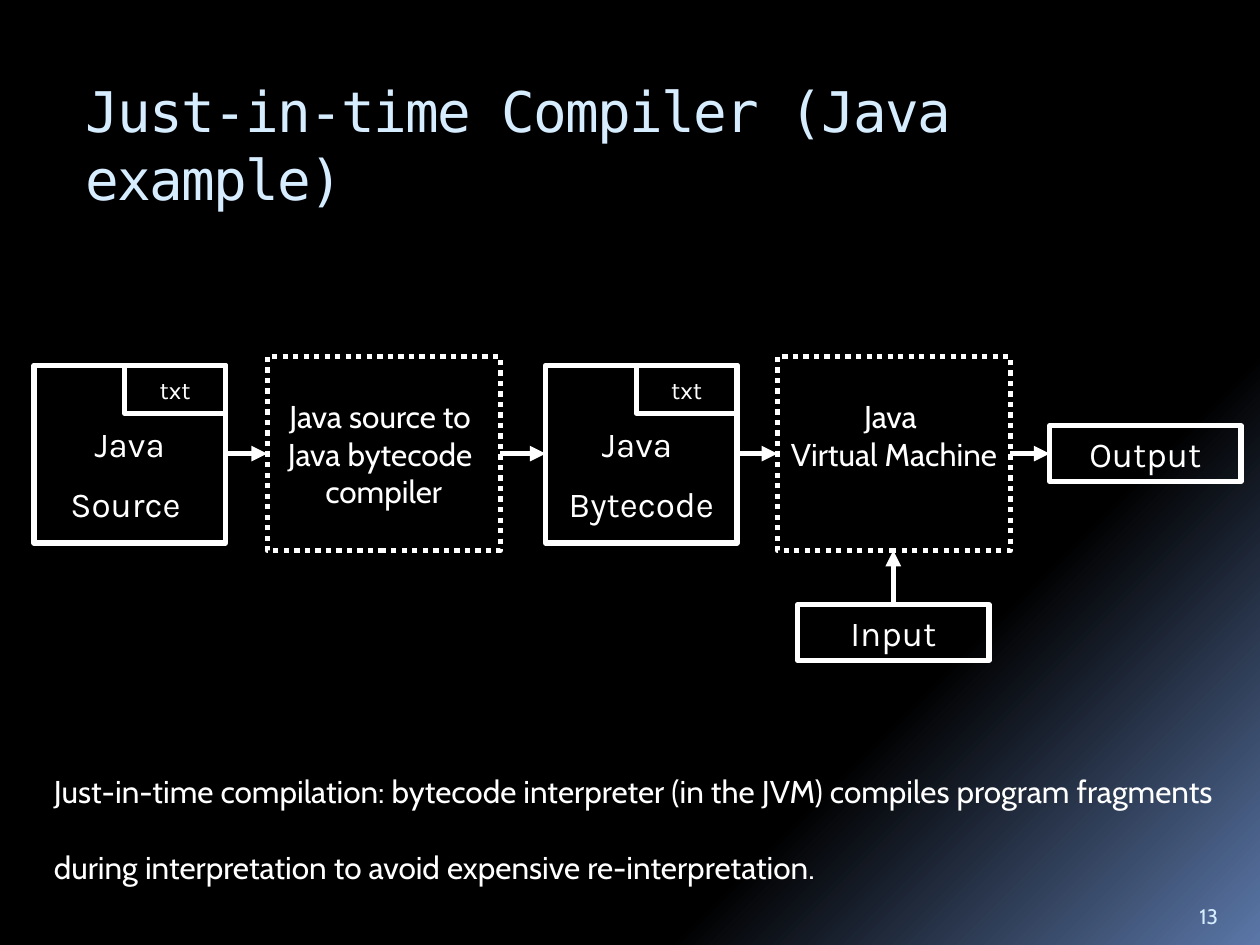
"""Build the slide on just-in-time compilation with Java."""
import pptx
import pptx.dml.color
import pptx.enum.dml
import pptx.enum.shapes
import pptx.enum.text
import pptx.oxml
import pptx.oxml.ns
import pptx.util

Inches = pptx.util.Inches
Pt = pptx.util.Pt
RGBColor = pptx.dml.color.RGBColor
PP_ALIGN = pptx.enum.text.PP_ALIGN
MSO_ANCHOR = pptx.enum.text.MSO_ANCHOR
RECTANGLE = pptx.enum.shapes.MSO_SHAPE.RECTANGLE

WHITE = RGBColor(0xFF, 0xFF, 0xFF)
BLACK = RGBColor(0x00, 0x00, 0x00)
PALE_BLUE = RGBColor(0xD6, 0xEC, 0xFF)
STEEL_BLUE = RGBColor(0x5B, 0x77, 0xA8)

FLOW_Y = 3.6
BOX_W = 1.52
STAGE_W = 1.85
STAGE_H = 1.54


def set_background(s):
    fill = s.background.fill
    fill.gradient()
    fill.gradient_angle = 315
    for stop, position, color in zip(fill.gradient_stops, (0.73, 1), (BLACK, STEEL_BLUE)):
        stop.position = position
        stop.color.rgb = color


def write(tf, lines, size, font="Cabin", color=WHITE, align=PP_ALIGN.CENTER,
          anchor=MSO_ANCHOR.TOP, gap=0):
    tf.vertical_anchor = anchor
    for i, line in enumerate(lines):
        p = tf.add_paragraph() if i else tf.paragraphs[0]
        p.text = line
        p.alignment = align
        p.space_before = Pt(gap if i else 0)
        p.font.size = Pt(size)
        p.font.name = font
        p.font.color.rgb = color


def add_title(s, text):
    sp = s.shapes.title
    sp.left, sp.top, sp.width, sp.height = map(Inches, (0.58, 0.56, 8.92, 1))
    write(sp.text_frame, [text], 32, "DejaVu Sans Mono", PALE_BLUE, PP_ALIGN.LEFT)
    sp.text_frame.word_wrap = True
    sp.text_frame.auto_size = pptx.enum.text.MSO_AUTO_SIZE.NONE
    for r in sp.text_frame.paragraphs[0].runs:
        r._r.get_or_add_rPr().set("spc", "-100")


def add_text(s, left, top, width, height, lines, size, **style):
    sp = s.shapes.add_textbox(*map(Inches, (left, top, width, height)))
    sp.text_frame.word_wrap = False
    write(sp.text_frame, lines, size, **style)


def add_box(shapes, left, top, width, height, lines=(), size=20,
            anchor=MSO_ANCHOR.MIDDLE):
    sp = shapes.add_shape(RECTANGLE, *map(Inches, (left, top, width, height)))
    sp.shadow.inherit = False
    sp.fill.background()
    sp.line.color.rgb = WHITE
    sp.line.width = Pt(3)
    write(sp.text_frame, lines, size, "Karla", anchor=anchor, gap=10)
    return sp


def add_document(s, left, lines):
    shapes = s.shapes.add_group_shape().shapes
    sp = add_box(shapes, left, 2.9, BOX_W, 1.41, lines, anchor=MSO_ANCHOR.BOTTOM)
    sp.text_frame.margin_bottom = Inches(0.15)
    add_box(shapes, left + BOX_W - 0.8, 2.9, 0.8, 0.38, ["txt"], 14)


def add_stage(s, left, lines):
    sp = add_box(s.shapes, left, FLOW_Y - STAGE_H / 2, STAGE_W, STAGE_H)
    sp.line.dash_style = pptx.enum.dml.MSO_LINE.ROUND_DOT
    add_text(s, left, 3.1, STAGE_W, 1.01, lines, 18)


def add_arrow(s, x1, y1, x2, y2):
    line = s.shapes.add_connector(pptx.enum.shapes.MSO_CONNECTOR.STRAIGHT,
                                  *map(Inches, (x1, y1, x2, y2)))
    line.line.color.rgb = WHITE
    line.line.width = Pt(3)
    ns = pptx.oxml.ns.nsdecls("a")
    ln = line.line._get_or_add_ln()
    ln.append(pptx.oxml.parse_xml(f'<a:tailEnd {ns} type="triangle"/>'))
    line._element.spPr.append(pptx.oxml.parse_xml(f"<a:effectLst {ns}/>"))


def main():
    prs = pptx.Presentation()
    prs.slide_width, prs.slide_height = Inches(10), Inches(7.5)
    s = prs.slides.add_slide(prs.slide_layouts[5])
    set_background(s)
    add_title(s, "Just-in-time Compiler (Java example)")

    add_document(s, 0.27, ["Java", "Source "])
    add_stage(s, 2.12, ["Java source to ", "Java bytecode ", "compiler"])
    add_document(s, 4.33, ["Java ", "Bytecode"])
    add_stage(s, 6.17, ["Java ", "Virtual Machine"])
    add_box(s.shapes, 8.33, 3.38, BOX_W, 0.44, ["Output"])
    add_box(s.shapes, 6.33, 4.8, BOX_W, 0.44, ["Input"])

    for start, end in ((1.79, 2.12), (3.97, 4.33), (5.85, 6.17), (8.02, 8.33)):
        add_arrow(s, start, FLOW_Y, end, FLOW_Y)
    add_arrow(s, 7.09, 4.8, 7.09, FLOW_Y + STAGE_H / 2)

    add_text(s, 0.33, 6.08, 9.43, 0.71,
             ["Just-in-time compilation: bytecode interpreter (in the JVM) compiles program fragments",
              "during interpretation to avoid expensive re-interpretation."],
             18, align=PP_ALIGN.LEFT, gap=21.5)
    add_text(s, 9.42, 7.02, 0.5, 0.4, ["13"], 12, color=PALE_BLUE,
             align=PP_ALIGN.LEFT, anchor=MSO_ANCHOR.BOTTOM)
    prs.save("out.pptx")


if __name__ == "__main__":
    main()
